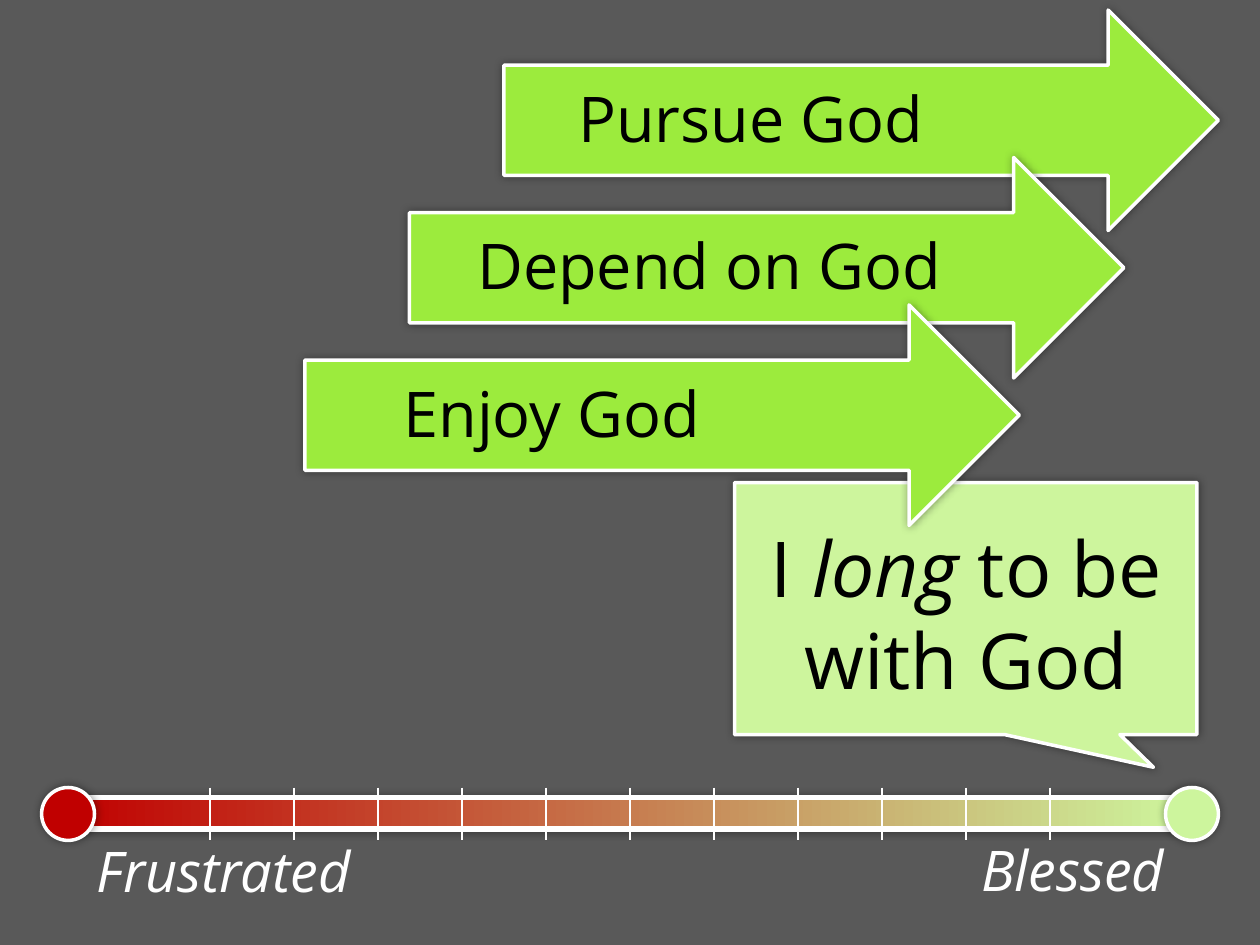
from lxml.etree import SubElement
from pptx import Presentation
from pptx.dml.color import RGBColor
from pptx.enum.shapes import MSO_CONNECTOR as Connector, MSO_SHAPE as Shape
from pptx.enum.text import MSO_AUTO_SIZE as AutoSize, PP_ALIGN as Align
from pptx.oxml.ns import qn
from pptx.util import Inches, Pt

FONT = "Open Sans"
WHITE, BLACK, GRAY = "FFFFFF", "000000", "595959"
RED, PALE_GREEN, GREEN = "C00000", "CDF59D", "9CEB3D"


def color(value):
    return RGBColor.from_string(value)


def add_glow_shadow(shape):
    """Soft black shadow without offset."""
    shape.shadow.inherit = False
    effects = shape._element.spPr.find(qn("a:effectLst"))
    shadow = SubElement(effects, qn("a:outerShdw"), blurRad=str(Pt(5)),
                        dist="0", dir="0", algn="ctr", rotWithShape="0")
    tone = SubElement(shadow, qn("a:srgbClr"), val=BLACK)
    SubElement(tone, qn("a:alpha"), val="40000")


def add_shape(page, kind, left, top, width, height, fill, line_width=2):
    """Filled shape; a white outline and shadow unless line_width is 0."""
    shape = page.shapes.add_shape(
        kind, Inches(left), Inches(top), Inches(width), Inches(height))
    if isinstance(fill, tuple):
        shape.fill.gradient()
        shape.fill.gradient_angle = 0
        for stop, value in zip(shape.fill.gradient_stops, fill):
            stop.color.rgb = color(value)
    else:
        shape.fill.solid()
        shape.fill.fore_color.rgb = color(fill)
    if line_width:
        shape.line.color.rgb = color(WHITE)
        shape.line.width = Pt(line_width)
        add_glow_shadow(shape)
    else:
        shape.line.fill.background()
        shape.shadow.inherit = False
    return shape


def add_text(page, runs, left, top, width, height, size,
             ink=BLACK, align=Align.CENTER):
    """Text box with one paragraph of (text, italic) runs."""
    box = page.shapes.add_textbox(
        Inches(left), Inches(top), Inches(width), Inches(height))
    frame = box.text_frame
    frame.word_wrap = True
    frame.auto_size = AutoSize.SHAPE_TO_FIT_TEXT
    para = frame.paragraphs[0]
    para.alignment = align
    for text, italic in runs:
        span = para.add_run()
        span.text = text
        span.font.name = FONT
        span.font.size = Pt(size)
        span.font.italic = italic
        span.font.color.rgb = color(ink)


def add_tick(page, x, top, bottom):
    tick = page.shapes.add_connector(
        Connector.STRAIGHT, Inches(x), Inches(top), Inches(x), Inches(bottom))
    tick.line.color.rgb = color(WHITE)
    tick.line.width = Pt(1.5)
    SubElement(tick._element.spPr, qn("a:effectLst"))


def add_callout(page):
    callout = add_shape(page, Shape.RECTANGULAR_CALLOUT,
                        5.83, 3.83, 3.67, 2, PALE_GREEN)
    callout.adjustments[0] = 0.406
    callout.adjustments[1] = 0.63
    add_text(page, [("I ", False), ("long", True), (" to be with God", False)],
             5.92, 4.08, 3.5, 1.58, size=44)


def add_scale(page):
    top, knob = 6.25, 0.42
    for left, fill in ((0.33, RED), (9.25, PALE_GREEN)):
        add_shape(page, Shape.OVAL, left, top, knob, knob, fill)
    for step in range(11):
        add_tick(page, (5 + 2 * step) / 3, top, top + knob)
    add_text(page, [("Frustrated", True)], 0.67, 6.59, 3.08, 0.64,
             size=32, ink=WHITE, align=Align.LEFT)
    add_text(page, [("Blessed", True)], 4.67, 6.58, 4.67, 0.64,
             size=32, ink=WHITE, align=Align.RIGHT)


def add_arrow(page, label, left, top, label_left):
    add_shape(page, Shape.RIGHT_ARROW, left, top, 5.67, 1.75, GREEN)
    add_text(page, [(label, False)], label_left, top + 0.5, 3.92, 0.71, size=36)


def main():
    deck = Presentation()
    deck.slide_width, deck.slide_height = Inches(10), Inches(7.5)
    page = deck.slides.add_slide(deck.slide_layouts[6])

    # Backdrop and gradient bar
    add_shape(page, Shape.RECTANGLE, 0, 0, 10, 7.5, GRAY, line_width=0)
    add_shape(page, Shape.RECTANGLE, 0.5, 6.33, 8.92, 0.25,
              (RED, PALE_GREEN), line_width=3)

    # Callout, then the scale with its knobs, ticks and end labels
    add_callout(page)
    add_scale(page)

    # Staggered arrows, each overlapping the one above
    arrows = (("Pursue God", 4, 4), ("Depend on God", 3.25, 3.67),
              ("Enjoy God", 2.42, 2.42))
    for row, (label, left, label_left) in enumerate(arrows):
        add_arrow(page, label, left, 0.08 + 1.17 * row, label_left)

    deck.save("out.pptx")


if __name__ == "__main__":
    main()
